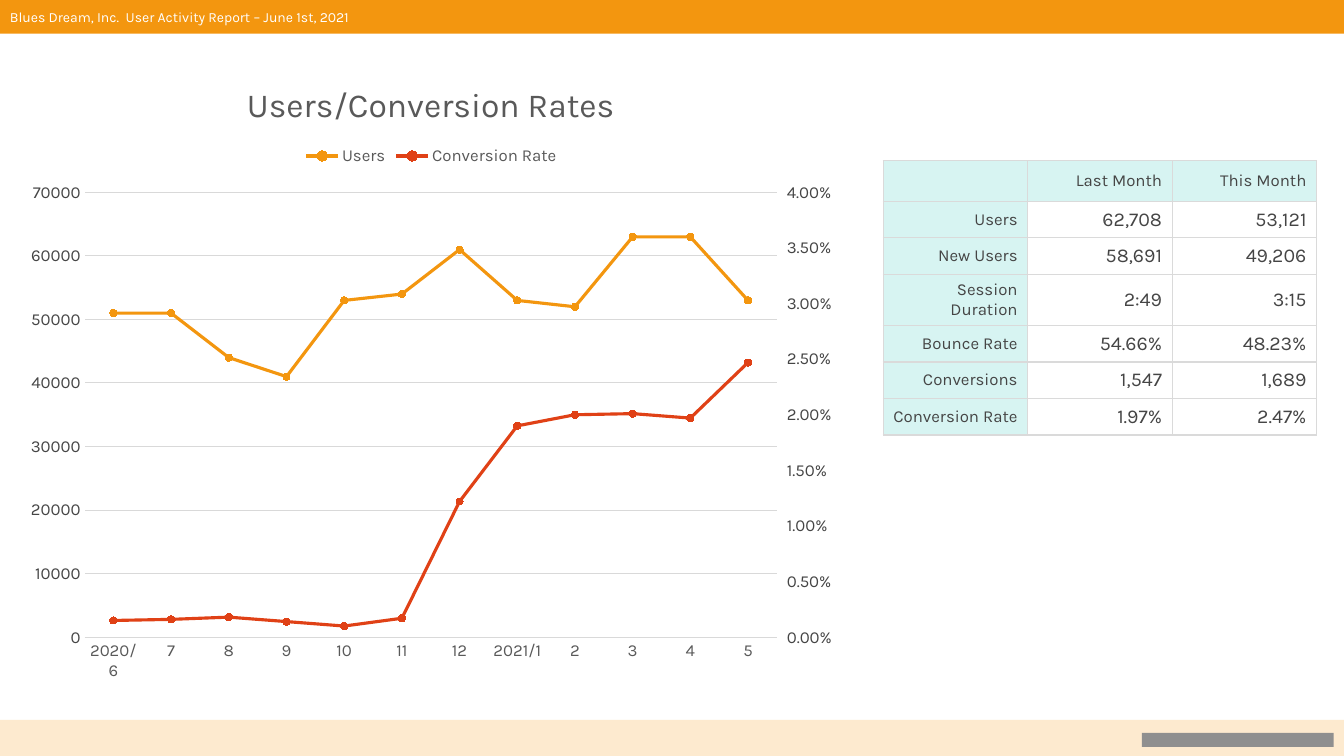
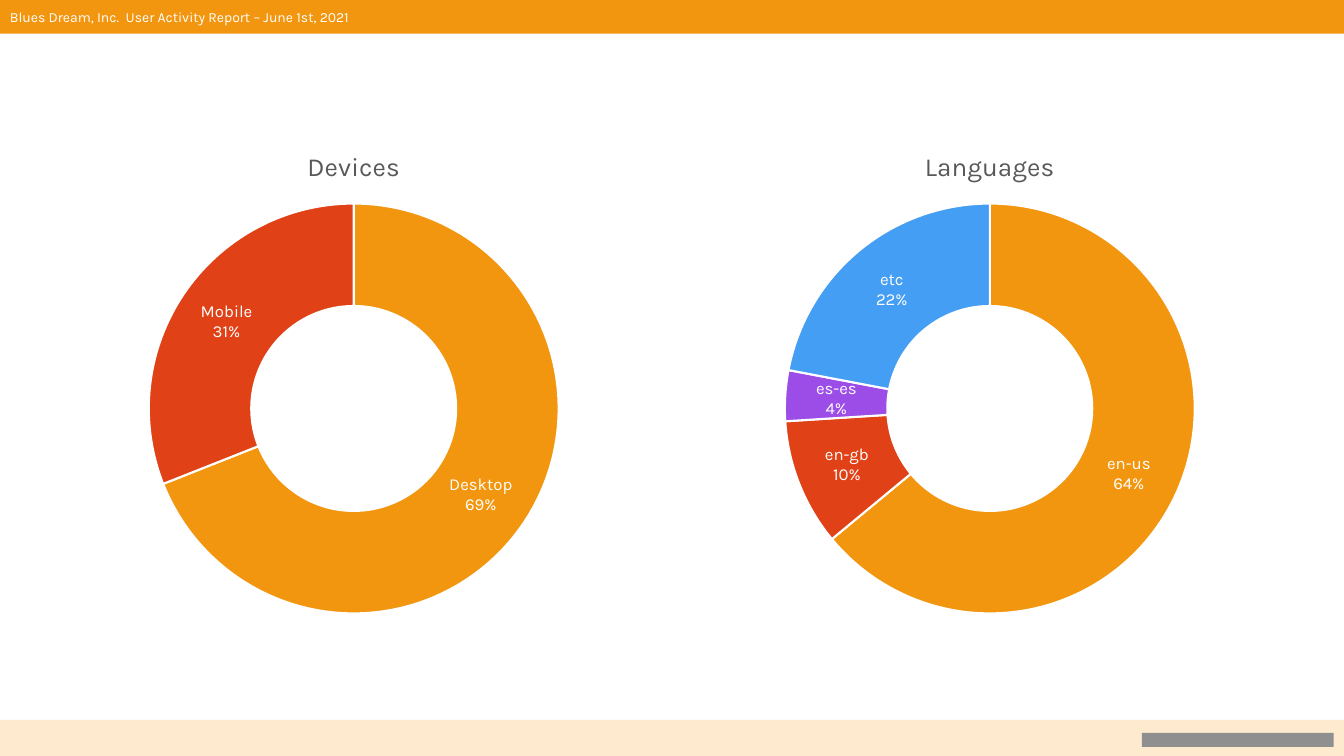
from copy import deepcopy

from pptx import Presentation
from pptx.chart.axis import ValueAxis
from pptx.chart.data import CategoryChartData
from pptx.dml.color import RGBColor
from pptx.enum.chart import XL_CHART_TYPE, XL_LEGEND_POSITION, XL_MARKER_STYLE, XL_TICK_MARK
from pptx.enum.shapes import MSO_SHAPE
from pptx.enum.text import MSO_ANCHOR, MSO_AUTO_SIZE, PP_ALIGN
from pptx.oxml import parse_xml
from pptx.oxml.ns import nsdecls
from pptx.util import Cm, Pt

# Shared look
FONT = "Karla"
ORANGE, RED, PURPLE, BLUE = "F3960F", "E04116", "9D4DE7", "449EF3"
PEACH, MINT, WHITE, GRAY = "FDEACF", "D7F4F2", "FFFFFF", "8F8F8F"
TEXT, CHART_TEXT = "454545", "595959"
GRID, BORDER = "D9D9D9", "DADADA"
PAGE_WIDTH, PAGE_HEIGHT, BAND_HEIGHT = 33.87, 19.05, 0.91

# Content
MONTHS = ["2020/6", "7", "8", "9", "10", "11", "12", "2021/1", "2", "3", "4", "5"]
USERS = [51000, 51000, 44000, 41000, 53000, 54000, 61000, 53000, 52000, 63000, 63000, 53000]
RATES = [0.0015, 0.0016, 0.0018, 0.0014, 0.001, 0.0017,
         0.0122, 0.019, 0.02, 0.0201, 0.0197, 0.0247]
SUMMARY = [
    ("", "Last Month", "This Month"),
    ("Users", "62,708", "53,121"),
    ("New Users", "58,691", "49,206"),
    ("Session Duration", "2:49", "3:15"),
    ("Bounce Rate", "54.66%", "48.23%"),
    ("Conversions", "1,547", "1,689"),
    ("Conversion Rate", "1.97%", "2.47%"),
]


def color(value):
    return RGBColor.from_string(value)


def style_font(font, size, value):
    font.size = Pt(size)
    font.color.rgb = color(value)
    font.name = FONT
    font.bold = False


def write_text(frame, text, size, value, align=PP_ALIGN.LEFT):
    frame.text = text
    para = frame.paragraphs[0]
    para.alignment = align
    style_font(para.font, size, value)
    for span in para.runs:
        style_font(span.font, size, value)


# Bands and header
def add_bar(page, left, top, width, height, fill):
    bar = page.shapes.add_shape(MSO_SHAPE.RECTANGLE, *map(Cm, (left, top, width, height)))
    bar.shadow.inherit = False
    bar.fill.solid()
    bar.fill.fore_color.rgb = color(fill)
    bar.line.fill.background()


def add_header_text(page, text):
    box = page.shapes.add_textbox(0, Cm(0.1), Cm(13.49), Cm(0.68))
    box.text_frame.word_wrap = True
    box.text_frame.auto_size = MSO_AUTO_SIZE.SHAPE_TO_FIT_TEXT
    write_text(box.text_frame, text, 10, WHITE)


def add_page(deck):
    page = deck.slides.add_slide(deck.slide_layouts[6])
    add_bar(page, 0, PAGE_HEIGHT - BAND_HEIGHT, PAGE_WIDTH, BAND_HEIGHT, PEACH)
    add_bar(page, 0, -0.06, PAGE_WIDTH, BAND_HEIGHT, ORANGE)
    add_header_text(page, "Blues Dream, Inc.  User Activity Report – June 1st, 2021")
    add_bar(page, 28.78, 18.47, 4.83, 0.35, GRAY)
    return page


# Charts
def add_chart(page, kind, frame, data, title, title_size):
    chart = page.shapes.add_chart(kind, *map(Cm, frame), data).chart
    style_font(chart.font, 10, "000000")
    chart.has_title = True
    write_text(chart.chart_title.text_frame, title, title_size, CHART_TEXT, PP_ALIGN.CENTER)
    return chart


def place_part(chart, part, frame, left, top, width=None, height=None):
    """Put a chart part at a position on the page, given in centimetres."""
    element = chart.element.xpath(f"c:chart/c:{part}")[0]
    for layout in element.xpath("c:layout"):
        element.remove(layout)
    values = {"x": (left - frame[0]) / frame[2], "y": (top - frame[1]) / frame[3]}
    target = ""
    if width is not None:
        values.update(w=width / frame[2], h=height / frame[3])
        target = '<c:layoutTarget val="inner"/>'
    modes = "".join(f'<c:{key}Mode val="edge"/>' for key in "xy")
    sizes = "".join(f'<c:{key} val="{value:.4f}"/>' for key, value in values.items())
    element.insert(0 if part == "plotArea" else 1, parse_xml(
        f'<c:layout {nsdecls("c")}><c:manualLayout>{target}{modes}{sizes}'
        "</c:manualLayout></c:layout>"))


def set_value(element, tag, value):
    element.xpath(f"c:{tag}")[0].set("val", value)


def add_right_axis(chart):
    """Move the last series to a second line plot with its own axes."""
    area = chart.element.xpath("//c:plotArea")[0]
    plot = area.xpath("c:lineChart")[0]
    right_plot = deepcopy(plot)
    plot.remove(plot.xpath("c:ser")[1])
    right_plot.remove(right_plot.xpath("c:ser")[0])
    plot.addnext(right_plot)
    for axis_id, new_id in zip(right_plot.xpath("c:axId"), ("5001", "5002")):
        axis_id.set("val", new_id)

    value_axis = area.xpath("c:valAx")[0]
    right_value = deepcopy(value_axis)
    right_category = deepcopy(area.xpath("c:catAx")[0])
    value_axis.addnext(right_value)
    right_value.addnext(right_category)
    for axis, own, other in ((right_category, "5001", "5002"), (right_value, "5002", "5001")):
        set_value(axis, "axId", own)
        set_value(axis, "crossAx", other)
    set_value(right_value, "axPos", "r")
    set_value(right_value, "crosses", "max")
    ValueAxis(right_category).visible = False

    axis = ValueAxis(right_value)
    axis.has_major_gridlines = False
    axis.maximum_scale = 0.04
    axis.major_unit = 0.005
    axis.major_tick_mark = XL_TICK_MARK.OUTSIDE
    axis.tick_labels.number_format = "0.00%"
    axis.tick_labels.number_format_is_linked = False


def style_line(line, value, width):
    line.color.rgb = color(value)
    line.width = Pt(width)


def add_rates_chart(page):
    frame = (0.33, 1.45, 21.06, 16.05)
    data = CategoryChartData()
    data.categories = MONTHS
    data.add_series("Users", USERS, "General")
    data.add_series("Conversion Rate", RATES, "0.00%")
    chart = add_chart(page, XL_CHART_TYPE.LINE_MARKERS, frame, data,
                      "Users/Conversion Rates", 24)
    for series, value in zip(chart.plots[0].series, (ORANGE, RED)):
        series.smooth = False
        style_line(series.format.line, value, 2.25)
        series.marker.style = XL_MARKER_STYLE.CIRCLE
        series.marker.size = 5
        series.marker.format.fill.solid()
        series.marker.format.fill.fore_color.rgb = color(value)
        series.marker.format.line.color.rgb = color(value)

    for axis, value in ((chart.category_axis, CHART_TEXT), (chart.value_axis, TEXT)):
        axis.major_tick_mark = axis.minor_tick_mark = XL_TICK_MARK.NONE
        style_font(axis.tick_labels.font, 12, value)
    style_line(chart.category_axis.format.line, GRID, 0.75)
    axis = chart.value_axis
    axis.minimum_scale, axis.maximum_scale, axis.major_unit = 0, 70000, 10000
    axis.format.line.fill.background()
    axis.has_major_gridlines = True
    style_line(axis.major_gridlines.format.line, GRID, 0.75)
    axis.tick_labels.number_format = "General"
    axis.tick_labels.number_format_is_linked = False
    add_right_axis(chart)

    chart.has_legend = True
    chart.legend.position = XL_LEGEND_POSITION.TOP
    chart.legend.include_in_layout = False
    style_font(chart.legend.font, 12, CHART_TEXT)
    place_part(chart, "title", frame, 6.07, 1.93)
    place_part(chart, "legend", frame, 7.58, 3.58)
    place_part(chart, "plotArea", frame, 2.13, 4.85, 17.45, 11.21)


def add_doughnut(page, left, title, title_left, shares):
    frame = (left, 3.23, 11.33, 12.6)
    data = CategoryChartData()
    data.categories = list(shares)
    data.add_series("Series 1", list(shares.values()))
    chart = add_chart(page, XL_CHART_TYPE.DOUGHNUT, frame, data, title, 18.6)
    chart.has_legend = False
    plot = chart.plots[0]
    plot.vary_by_categories = True
    chart.element.xpath("//c:holeSize")[0].set("val", "54")
    for index, value in zip(range(len(shares)), (ORANGE, RED, PURPLE, BLUE)):
        point = plot.series[0].points[index]
        point.format.fill.solid()
        point.format.fill.fore_color.rgb = color(value)
        style_line(point.format.line, WHITE, 1.5)

    plot.has_data_labels = True
    labels = plot.data_labels
    labels.show_value = False
    labels.show_category_name = labels.show_percentage = True
    labels.number_format = "0%"
    labels.number_format_is_linked = False
    style_font(labels.font, 12, WHITE)
    separator = parse_xml(f'<c:separator {nsdecls("c")}>\n</c:separator>')
    chart.element.xpath("//c:dLbls/c:showBubbleSize")[0].addnext(separator)
    place_part(chart, "title", frame, title_left, 3.63)
    place_part(chart, "plotArea", frame, left + 0.5, 5.13, 10.33, 10.33)


# Table
def draw_borders(cell):
    properties = cell._tc.get_or_add_tcPr()
    for index, side in enumerate("LRTB"):
        properties.insert(index, parse_xml(
            f'<a:ln{side} {nsdecls("a")} w="{Pt(1)}"><a:solidFill>'
            f'<a:srgbClr val="{BORDER}"/></a:solidFill></a:ln{side}>'))


def add_summary_table(page):
    heights = [1.02, 0.92, 0.92, 1.29, 0.92, 0.92, 0.92]
    table = page.shapes.add_table(
        len(SUMMARY), 3, Cm(22.26), Cm(4.05), Cm(10.92), Cm(sum(heights))).table
    table.first_row = table.horz_banding = False
    for column in table.columns:
        column.width = Cm(3.64)
    for row_index, (values, height) in enumerate(zip(SUMMARY, heights)):
        table.rows[row_index].height = Cm(height)
        for column_index, text in enumerate(values):
            cell = table.cell(row_index, column_index)
            is_header = row_index == 0 or column_index == 0
            write_text(cell.text_frame, text, 12 if is_header else 14, TEXT, PP_ALIGN.RIGHT)
            cell.vertical_anchor = MSO_ANCHOR.MIDDLE
            cell.margin_left = Cm(0.22)
            if is_header:
                cell.fill.solid()
                cell.fill.fore_color.rgb = color(MINT)
            else:
                cell.fill.background()
            draw_borders(cell)


def main():
    deck = Presentation()
    deck.slide_width, deck.slide_height = Cm(PAGE_WIDTH), Cm(PAGE_HEIGHT)

    # Users and conversions
    page = add_page(deck)
    add_rates_chart(page)
    add_summary_table(page)

    # Devices and languages
    page = add_page(deck)
    add_doughnut(page, 3.25, "Devices", 7.63, {"Desktop": 69, "Mobile": 31})
    add_doughnut(page, 19.28, "Languages", 23.19,
                 {"en-us": 64, "en-gb": 10, "es-es": 4, "etc": 22})
    deck.save("out.pptx")


if __name__ == "__main__":
    main()
